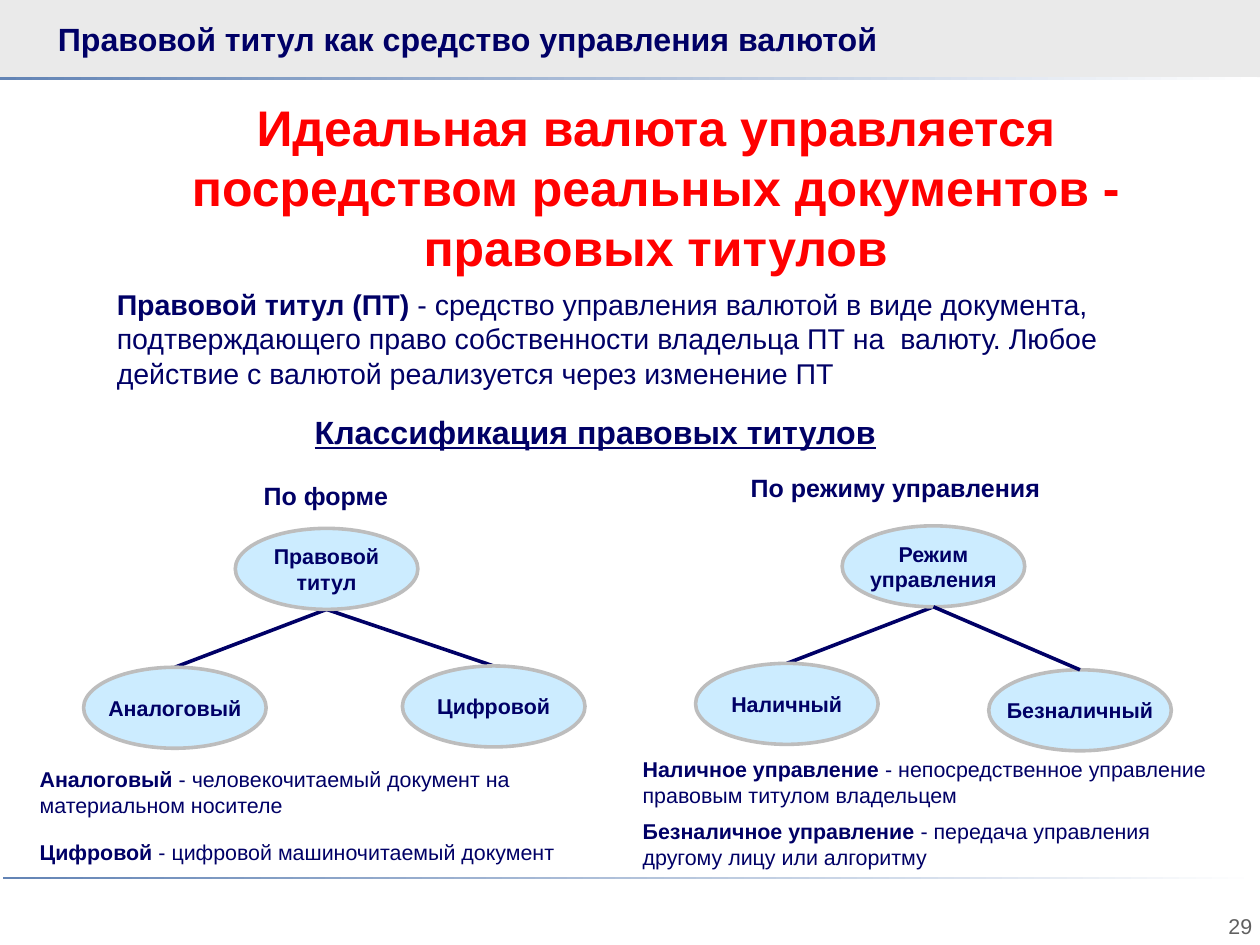
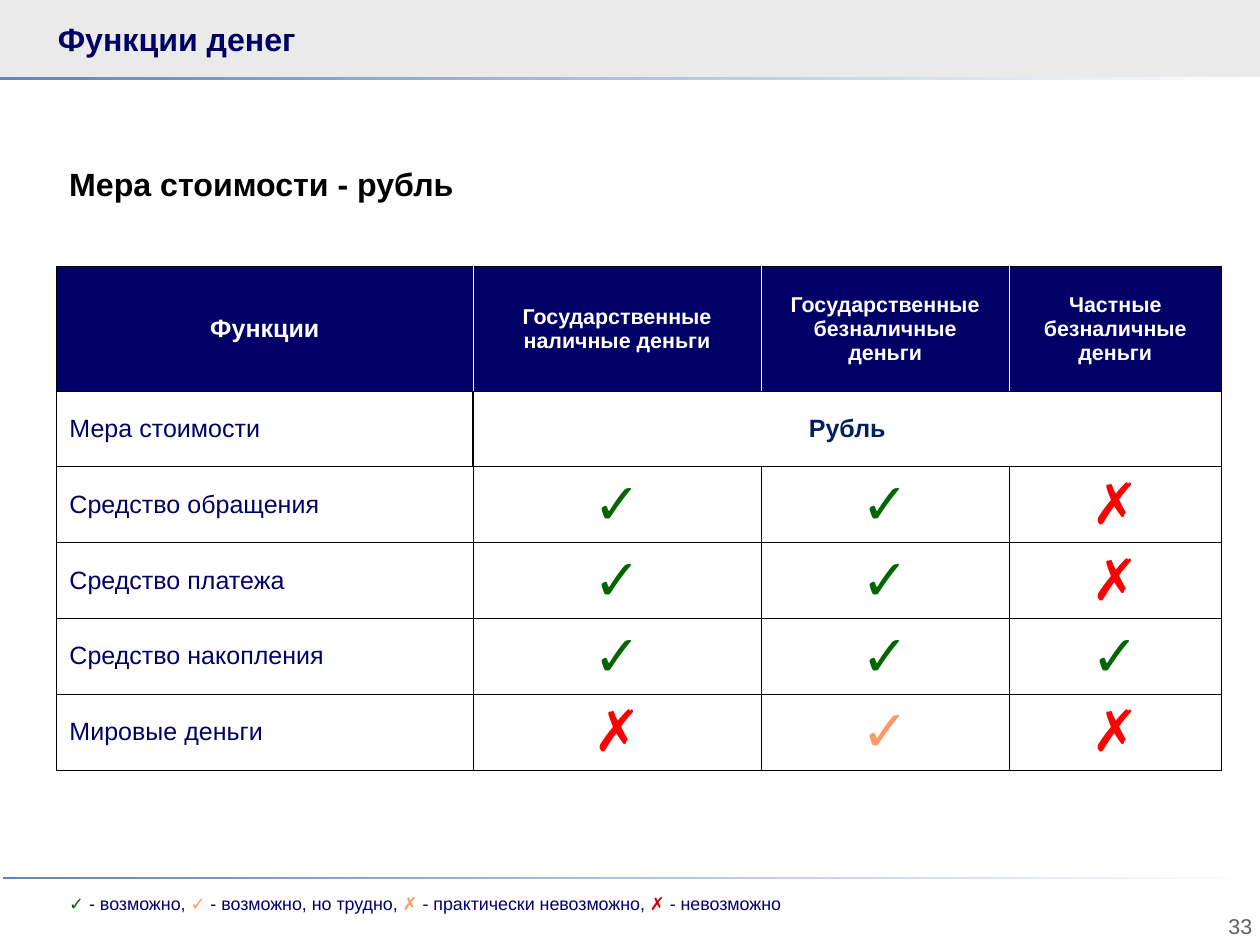
from dataclasses import dataclass
from typing import Any

from lxml import etree
from pptx import Presentation
from pptx import util as u
from pptx.dml.color import RGBColor
from pptx.enum import shapes, text
from pptx.oxml.ns import qn

PX = 9144
FONT = "Arial"
HUES = {
    "navy": "000066", "red": "FF0000", "black": "000000", "white": "FFFFFF",
    "band": "EAEAEA", "rule": "6384B5", "page": "606060", "node": "CCECFF",
    "rim": "BDBDBD", "good": "006600", "hard": "FF9966", "never": "CC0000",
    "unit": "002060",
}
MID = text.PP_ALIGN.CENTER
LEFT = text.PP_ALIGN.LEFT
RIGHT = text.PP_ALIGN.RIGHT
MARKS = {"y": ("✓", "good"), "h": ("✓", "hard"), "n": ("✗", "red")}


@dataclass
class Run:
    text: str
    bold: bool | None = None
    hue: str | None = None


@dataclass
class Node:
    text: str
    x: int
    y: int
    wrap: bool = False
    under: bool = False


@dataclass
class Tree:
    root: Node
    kids: tuple[Node, Node]


def px(*sizes: int) -> list[u.Emu]:
    return [u.Emu(size * PX) for size in sizes]


def tint(name: str) -> RGBColor:
    return RGBColor.from_string(HUES[name])


def say(frame: Any, *runs: Run | str, size: int = 12, hue: str = "navy",
        bold: bool = False, under: bool = False, align: Any = LEFT,
        before: int = 0) -> None:
    para = frame.paragraphs[-1]
    if para.runs:
        para = frame.add_paragraph()
    para.alignment = align
    para.space_before = u.Pt(before)
    for item in runs:
        part = item if isinstance(item, Run) else Run(item)
        run = para.add_run()
        run.text = part.text
        font = run.font
        font.name, font.size = FONT, u.Pt(size)
        font.bold = bold if part.bold is None else part.bold
        font.underline = under
        font.color.rgb = tint(part.hue or hue)


def inset(frame: Any, left: int, top: int, right: int, base: int) -> None:
    (frame.margin_left, frame.margin_top,
     frame.margin_right, frame.margin_bottom) = px(left, top, right, base)


def box(slide: Any, x: int, y: int, w: int, h: int, wrap: bool = True) -> Any:
    frame = slide.shapes.add_textbox(*px(x, y, w, h)).text_frame
    frame.word_wrap = wrap
    frame.auto_size = text.MSO_AUTO_SIZE.SHAPE_TO_FIT_TEXT
    return frame


def sheet(slide: Any, x: int, y: int, wide: list[int], high: list[int]) -> Any:
    table = slide.shapes.add_table(
        len(high), len(wide), *px(x, y, sum(wide), sum(high))).table
    table.horz_banding = table.first_row = False
    for col, size in zip(table.columns, px(*wide)):
        col.width = size
    for row, size in zip(table.rows, px(*high)):
        row.height = size
    return table


def trim(cell: Any, spot: int, hue: str | None = None, width: float = 0) -> None:
    line = etree.Element(qn(f"a:ln{'LRTB'[spot]}"), w=str(u.Pt(width)))
    fill = etree.SubElement(line, qn("a:solidFill" if hue else "a:noFill"))
    if hue:
        etree.SubElement(fill, qn("a:srgbClr"), val=HUES[hue])
    cell._tc.get_or_add_tcPr().insert(spot, line)


def rule(slide: Any, x: int, y: int) -> None:
    cell = sheet(slide, x, y, [978], [2]).cell(0, 0)
    inset(cell, 0, 0, 0, 0)
    para = cell.text_frame.paragraphs[0]
    etree.SubElement(para._p, qn("a:endParaRPr"), sz="100")
    fill = cell.fill
    fill.gradient()
    fill.gradient_angle = 0
    for stop, place, hue in zip(fill.gradient_stops, (0, 1), ("rule", "white")):
        stop.position = place
        stop.color.rgb = tint(hue)
    for spot in range(4):
        trim(cell, spot)


def start(deck: Any, name: str, page: int) -> Any:
    slide = deck.slides.add_slide(deck.slide_layouts[5])
    band = slide.shapes.add_shape(
        shapes.MSO_SHAPE.RECTANGLE, *px(0, 0, 980, 60))
    band.shadow.inherit = False
    band.line.fill.background()
    band.fill.solid()
    band.fill.fore_color.rgb = tint("band")
    frame = box(slide, 843, 710, 131, 20)
    inset(frame, 0, 0, 0, 0)
    say(frame, str(page), hue="page", align=RIGHT)
    rule(slide, 0, 60)
    rule(slide, 2, 682)
    title = slide.shapes.title
    title.left, title.top, title.width, title.height = px(25, 0, 840, 60)
    slide.shapes._spTree.append(title._element)
    frame = title.text_frame
    frame.vertical_anchor = text.MSO_ANCHOR.MIDDLE
    inset(frame, 20, 4, 0, 4)
    say(frame, name, size=18, bold=True)
    return slide


def oval(slide: Any, node: Node) -> Any:
    shape = slide.shapes.add_shape(
        shapes.MSO_SHAPE.OVAL, *px(node.x, node.y, 142, 63))
    shape.shadow.inherit = False
    shape.fill.solid()
    shape.fill.fore_color.rgb = tint("node")
    shape.line.color.rgb = tint("rim")
    shape.line.width = u.Pt(2)
    frame = shape.text_frame
    frame.word_wrap = node.wrap
    frame.vertical_anchor = text.MSO_ANCHOR.MIDDLE
    inset(frame, 0, 5, 0, 5)
    for line in node.text.split("\n"):
        say(frame, line, bold=True, align=MID)
    return shape


def draw(slide: Any, tree: Tree) -> None:
    root = oval(slide, tree.root)
    x, y = root.left + root.width // 2, root.top + root.height
    for node in tree.kids:
        kid = oval(slide, node)
        line = slide.shapes.add_connector(
            shapes.MSO_CONNECTOR.STRAIGHT, x, y, x, y)
        line.end_connect(kid, 0)
        line.line.color.rgb = tint("navy")
        line.line.width = u.Pt(2)
        etree.SubElement(line._element.spPr, qn("a:effectLst"))
        if not node.under:
            root._element.addprevious(line._element)
            kid._element.addprevious(line._element)
            root._element.addprevious(line._element)


def edge(cell: Any, row: int, col: int) -> None:
    for spot, side in enumerate("LRTB"):
        pale = row == 0 and (side == "L" and col > 0 or side == "R" and col < 3)
        thick = (row == 1 and (col > 0 and side != "T" or side == "R")
                 or col > 0 and (row, side) == (2, "T"))
        trim(cell, spot, "white" if pale else "black", 1 if thick else 0.25)


def grid(slide: Any, heads: list[str], rows: list[tuple[str, str]]) -> None:
    wide = [324, 224, 193, 165]
    high = [97] + [59] * len(rows)
    table = sheet(slide, 44, 207, wide, high)
    for r in range(len(high)):
        for c in range(len(wide)):
            cell = table.cell(r, c)
            cell.vertical_anchor = text.MSO_ANCHOR.MIDDLE
            cell.fill.solid()
            cell.fill.fore_color.rgb = tint("white" if r else "navy")
            edge(cell, r, c)
            frame = cell.text_frame
            if r == 0:
                say(frame, heads[c], size=12 if c else 14, hue="white",
                    bold=True, align=MID)
                continue
            name, marks = rows[r - 1]
            if c == 0:
                say(frame, name, size=14)
                continue
            inset(cell, 10, 0, 10, 0)
            if marks:
                sign, hue = MARKS[marks[c - 1]]
                say(frame, sign, size=32, hue=hue, bold=True, align=MID)
    unit = table.cell(1, 1)
    unit.merge(table.cell(1, 3))
    say(unit.text_frame, "Рубль", size=14, hue="unit", bold=True, align=MID)


def titles(deck: Any) -> None:
    slide = start(deck, "Правовой титул как средство управления валютой", 29)
    frame = box(slide, 81, 70, 858, 241)
    say(frame, "Идеальная валюта управляется посредством реальных документов - "
        "правовых титулов", size=28, hue="red", bold=True, align=MID, before=6)
    say(frame, Run("Правовой титул (ПТ)", True),
        " - средство управления валютой в виде документа, подтверждающего "
        "право собственности владельца ПТ на  валюту. Любое действие с валютой "
        "реализуется через изменение ПТ", size=16, before=6)
    say(box(slide, 232, 316, 462, 40, False), "Классификация правовых титулов",
        size=18, bold=True, under=True, align=MID)
    say(box(slide, 165, 369, 177, 34), "По форме", size=14, bold=True, align=MID)
    say(box(slide, 574, 363, 319, 34), "По режиму управления", size=14, bold=True)
    draw(slide, Tree(Node("Правовой\nтитул", 183, 411),
                     (Node("Аналоговый", 65, 519), Node("Цифровой", 313, 518))))
    draw(slide, Tree(Node("Режим управления", 655, 409, wrap=True),
                     (Node("Наличный", 541, 516),
                      Node("Безналичный", 769, 521, under=True))))
    notes = (
        (21, 591, 88, 12, (
            ("Аналоговый", "человекочитаемый документ на материальном носителе"),
            ("Цифровой", "цифровой машиночитаемый документ"))),
        (490, 583, 99, 6, (
            ("Наличное управление",
             "непосредственное управление правовым титулом владельцем"),
            ("Безналичное управление",
             "передача управления другому лицу или алгоритму"))),
    )
    for x, y, h, gap, terms in notes:
        frame = box(slide, x, y, 469, h)
        for term, sense in terms:
            say(frame, Run(f"{term} ", True), f"- {sense}", before=gap)


def money(deck: Any) -> None:
    slide = start(deck, "Функции денег", 33)
    heads = ["Функции", "Государственные наличные деньги",
             "Государственные безналичные деньги", "Частные безналичные деньги"]
    grid(slide, heads, [
        ("Мера стоимости", ""), ("Средство обращения", "yyn"),
        ("Средство платежа", "yyn"), ("Средство накопления", "yyy"),
        ("Мировые деньги", "nhn")])
    keys = (("✓", "good", "возможно, "), ("✓", "hard", "возможно, но трудно, "),
            ("✗", "hard", "практически невозможно, "),
            ("✗", "never", "невозможно"))
    runs = [run for sign, hue, sense in keys
            for run in (Run(f"{sign} ", True, hue), Run(f"- {sense}"))]
    say(box(slide, 44, 689, 906, 27), *runs, size=10)
    say(box(slide, 44, 123, 879, 40), "Мера стоимости - рубль",
        size=18, hue="black", bold=True)


def main() -> None:
    deck = Presentation()
    deck.slide_width, deck.slide_height = px(980, 735)
    titles(deck)
    money(deck)
    deck.save("out.pptx")


if __name__ == "__main__":
    main()
